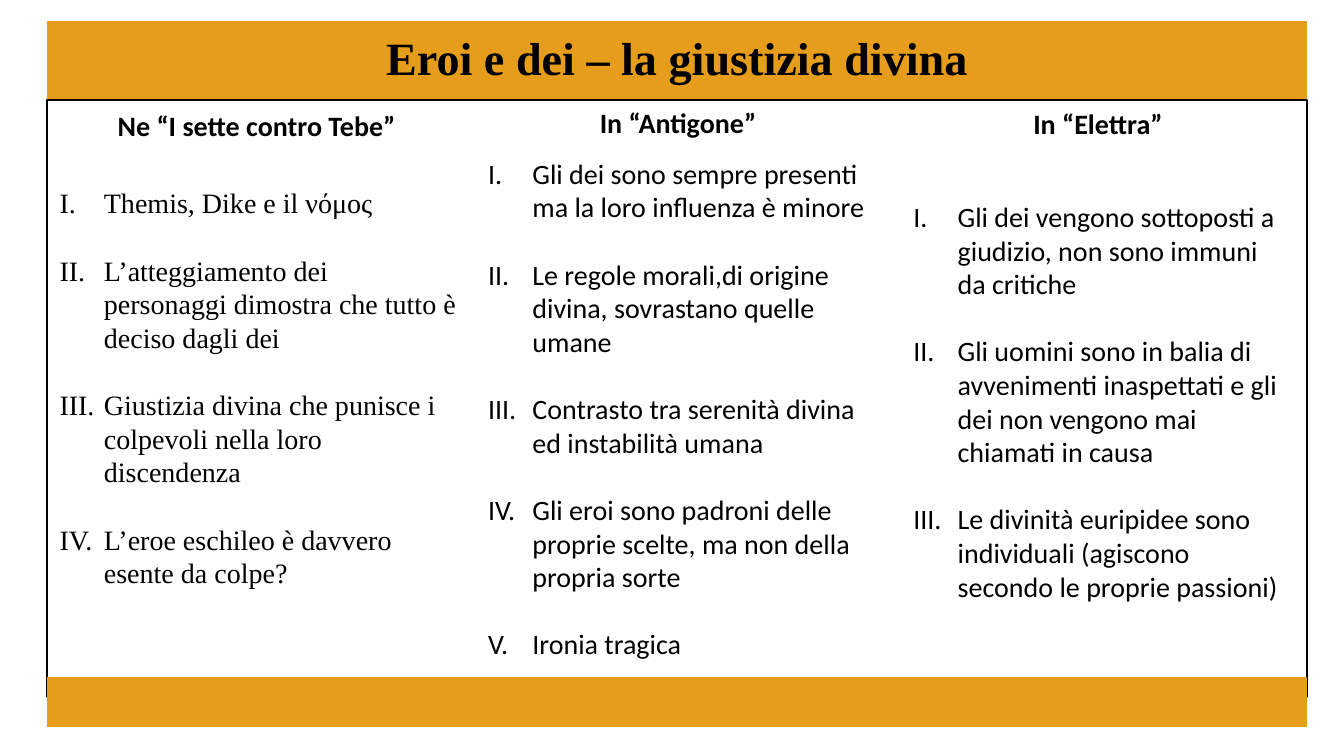
from dataclasses import dataclass

from lxml import etree
from pptx import Presentation, util as u
from pptx.dml.color import RGBColor
from pptx.enum import shapes, text
from pptx.oxml import ns


@dataclass(frozen=True)
class Theme:
    gold: str = "E59D1B"
    white: str = "FFFFFF"
    ink: str = "000000"
    sans: str = "Calibri"
    serif: str = "Times New Roman"
    title_size: int = 33
    text_size: int = 20
    line_height: int = 24
    indent: float = 0.44


THEME = Theme()
TITLE = "Eroi e dei – la giustizia divina"
TITLE_BOX = (0.47, 0.21, 12.49, 0.79)
PANEL_BOX = (0.47, 0.99, 12.49, 5.92)
FOOTER_BOX = (0.47, 6.72, 12.49, 0.49)

COLUMNS = [
    {
        "heading": "Ne “I sette contro Tebe”",
        "heading_box": (0.44, 1.03, 4.21, 0.74),
        "list_box": (0.49, 1.47, 4.14, 4.75),
        "font": THEME.serif,
        "anchor": text.MSO_ANCHOR.MIDDLE,
        "points": [
            "Themis, Dike e il νόμος",
            "L’atteggiamento dei personaggi dimostra che tutto è deciso dagli dei",
            "Giustizia divina che punisce i colpevoli nella loro discendenza",
            "L’eroe eschileo è davvero esente da colpe?",
        ],
    },
    {
        "heading": "In “Antigone”",
        "heading_box": (4.69, 1, 4.07, 0.74),
        "list_box": (4.74, 1.5, 4.12, 5.79),
        "font": THEME.sans,
        "anchor": text.MSO_ANCHOR.TOP,
        "points": [
            "Gli dei sono sempre presenti ma la loro influenza è minore",
            "Le regole morali,di origine divina, sovrastano quelle umane",
            "Contrasto tra serenità divina ed instabilità umana",
            "Gli eroi sono padroni delle proprie scelte, ma non della propria sorte",
            "Ironia tragica",
        ],
    },
    {
        "heading": "In “Elettra”",
        "heading_box": (8.83, 1.01, 4.12, 0.74),
        "list_box": (8.96, 1.93, 3.93, 4.14),
        "font": THEME.sans,
        "anchor": text.MSO_ANCHOR.TOP,
        "points": [
            "Gli dei vengono sottoposti a giudizio, non sono immuni da critiche",
            "Gli uomini sono in balia di avvenimenti inaspettati e gli dei non vengono mai chiamati in causa",
            "Le divinità euripidee sono individuali (agiscono secondo le proprie passioni)",
        ],
    },
]


def apply(target, values):
    for name, value in values.items():
        setattr(target, name, value)


def place(shape, box):
    apply(shape, dict(zip(("left", "top", "width", "height"), map(u.Inches, box))))


def paint(shape, fill, line, weight):
    shape.fill.solid()
    shape.fill.fore_color.rgb = RGBColor.from_string(fill)
    shape.line.color.rgb = RGBColor.from_string(line)
    shape.line.width = u.Pt(weight)


def write(shape, lines, font, para_format, anchor=text.MSO_ANCHOR.TOP):
    frame = shape.text_frame
    apply(frame, {"word_wrap": True, "vertical_anchor": anchor,
                  "auto_size": text.MSO_AUTO_SIZE.NONE})
    frame.text = "\n".join(lines)
    for para in frame.paragraphs:
        apply(para, {"space_before": u.Pt(0), **para_format})
        for span in para.runs:
            apply(span.font, font)
            span.font.color.rgb = RGBColor.from_string(THEME.ink)
    return frame.paragraphs


def add_band(page, box, fill, line, weight):
    band = page.shapes.add_shape(shapes.MSO_SHAPE.RECTANGLE, *map(u.Inches, box))
    band.shadow.inherit = False
    paint(band, fill, line, weight)


def add_title(page, box):
    title = page.shapes.title
    place(title, box)
    paint(title, THEME.gold, THEME.gold, 0.75)
    write(title, [TITLE],
          {"name": THEME.serif, "size": u.Pt(THEME.title_size), "bold": True},
          {"alignment": text.PP_ALIGN.CENTER, "line_spacing": 0.9},
          text.MSO_ANCHOR.MIDDLE)


def add_heading(shape, column):
    place(shape, column["heading_box"])
    write(shape, [column["heading"]],
          {"name": THEME.sans, "size": u.Pt(THEME.text_size), "bold": True},
          {"alignment": text.PP_ALIGN.CENTER})


def add_list(shape, column):
    place(shape, column["list_box"])
    line = u.Pt(THEME.line_height)
    paras = write(shape, column["points"],
                  {"name": column["font"], "size": u.Pt(THEME.text_size)},
                  {"line_spacing": line, "space_after": line}, column["anchor"])
    paras[-1].space_after = u.Pt(0)
    indent = u.Inches(THEME.indent)
    for para in paras:
        props = para._p.get_or_add_pPr()
        props.set("marL", str(indent))
        props.set("indent", str(-indent))
        font = etree.SubElement(props, ns.qn("a:buFont"))
        font.set("typeface", column["font"])
        etree.SubElement(props, ns.qn("a:buAutoNum")).set("type", "romanUcPeriod")


def add_columns(page):
    slots = [page.placeholders[index] for index in (1, 2, 3, 4)]
    for slot in slots:
        slot.element.getparent().append(slot.element)
    slots += [page.shapes.add_textbox(0, 0, 0, 0) for _ in range(2)]
    for column, heading, points in zip(COLUMNS, slots[::2], slots[1::2]):
        add_heading(heading, column)
        add_list(points, column)


def main():
    deck = Presentation()
    apply(deck, {"slide_width": u.Inches(13.33), "slide_height": u.Inches(7.5)})
    page = deck.slides.add_slide(deck.slide_layouts.get_by_name("Comparison"))
    add_title(page, TITLE_BOX)
    add_band(page, PANEL_BOX, THEME.white, THEME.ink, 1.5)
    add_band(page, FOOTER_BOX, THEME.gold, THEME.gold, 0.75)
    add_columns(page)
    deck.save("out.pptx")


if __name__ == "__main__":
    main()
